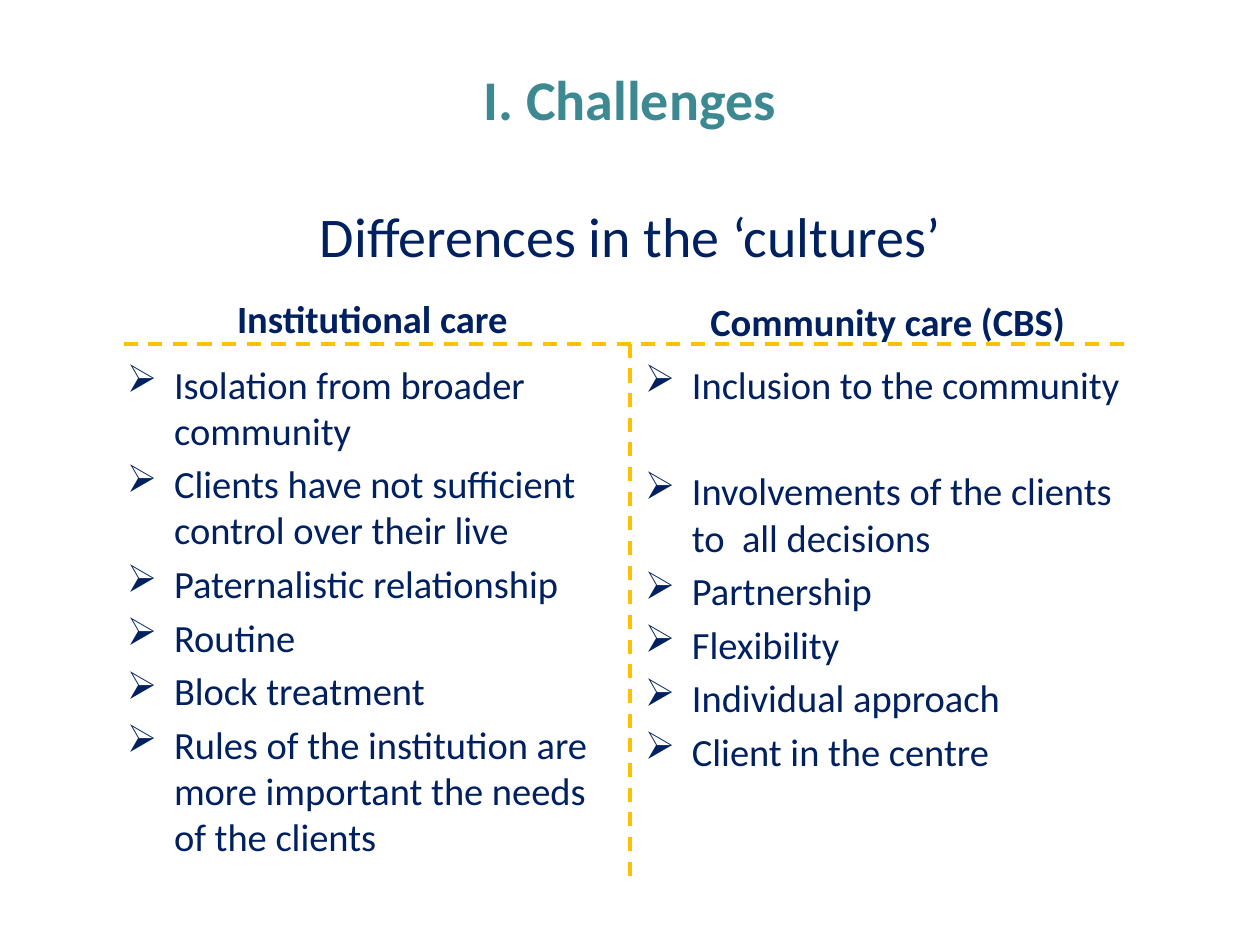
from dataclasses import dataclass

from lxml import etree
from pptx import Presentation
from pptx.dml.color import RGBColor
from pptx.enum import dml, shapes, text
from pptx.oxml import ns
from pptx.util import Cm, Pt

NAVY = RGBColor(0x00, 0x20, 0x60)
TEAL = RGBColor(0x3D, 0x89, 0x91)
GOLD = RGBColor(0xFF, 0xC0, 0x00)
FACE = "Calibri"
MID, TOP = text.MSO_ANCHOR.MIDDLE, text.MSO_ANCHOR.TOP
INSET = 0.13  # default top inset, cm
INDENT = Cm(0.95)


@dataclass
class Label:
    """A text box; lengths in cm, a bullet mark for lists."""
    at: tuple[float, float, float, float]
    lines: list[str]
    size: int
    color: RGBColor = NAVY
    bold: bool = False
    anchor: text.MSO_ANCHOR = TOP
    inset: float = INSET
    mark: str = ""
    gap: float = 0  # points left free below the first line


@dataclass
class Rule:
    """A dashed line; ends in cm."""
    start: tuple[float, float]
    end: tuple[float, float]


def apply(item, **values) -> None:
    for name, value in values.items():
        setattr(item, name, value)


def add_mark(para, mark: str) -> None:
    props = para._p.get_or_add_pPr()
    props.set("marL", str(INDENT))
    props.set("indent", str(-INDENT))
    etree.SubElement(props, ns.qn("a:buChar")).set("char", mark)


def draw_label(slide, label: Label) -> None:
    box = slide.shapes.add_textbox(*map(Cm, label.at))
    frame = box.text_frame
    apply(frame, word_wrap=True, vertical_anchor=label.anchor,
          margin_top=Cm(label.inset))
    for i, line in enumerate(label.lines):
        para = frame.paragraphs[0] if i == 0 else frame.add_paragraph()
        if label.mark:
            add_mark(para, label.mark)
        else:
            para.alignment = text.PP_ALIGN.CENTER
        if i:
            para.space_before = Pt(4.2)
        elif label.gap:
            para.space_after = Pt(label.gap)
        run = para.add_run()
        run.text = line
        apply(run.font, name=FACE, size=Pt(label.size), bold=label.bold)
        run.font.color.rgb = label.color


def draw_rule(slide, rule: Rule) -> None:
    line = slide.shapes.add_connector(
        shapes.MSO_CONNECTOR.STRAIGHT, *map(Cm, rule.start + rule.end))
    line.line.color.rgb = GOLD
    apply(line.line, width=Pt(2), dash_style=dml.MSO_LINE.DASH)
    etree.SubElement(line._element.spPr, ns.qn("a:effectLst"))


# Column grid, cm
WIDE, TALL = 25.4, 19.05
COL = 10.39
LEFT, RIGHT = 2.31, 12.7
HEAD, LIST, BAR = 5.54, 7.14, 6.93

HEADING = dict(size=22, bold=True, anchor=MID, inset=0.43)
ITEMS = dict(size=22, mark="➢")

LABELS = [
    # Title and subtitle
    Label((0, 0, WIDE, 3.94), ["I. Challenges"], 32, TEAL, True, MID),
    Label((0.71, 3.94, 24, 1.6), ["Differences in the ‘cultures’"], 32),
    # Left column
    Label((LEFT, HEAD, COL, 1.45), ["Institutional care"], **HEADING),
    Label((LEFT, LIST, COL, 10.97), [
        "Isolation from broader community",
        "Clients have not sufficient control over their live",
        "Paternalistic relationship",
        "Routine",
        "Block treatment",
        "Rules of the institution are more important the needs of the clients",
    ], **ITEMS),
    # Right column
    Label((RIGHT, HEAD, COL, 1.57), ["Community care (CBS)"], **HEADING),
    Label((RIGHT + 0.05, LIST, COL, 10.97), [
        "Inclusion to the community",
        "Involvements of the clients  to  all decisions",
        "Partnership",
        "Flexibility",
        "Individual approach",
        "Client in the centre",
    ], gap=30.5, **ITEMS),
]

RULES = [
    Rule((RIGHT, BAR), (RIGHT, 17.73)),
    Rule((2.49, BAR), (22.71, BAR)),
]


def main() -> None:
    deck = Presentation()
    apply(deck, slide_width=Cm(WIDE), slide_height=Cm(TALL))
    slide = deck.slides.add_slide(deck.slide_layouts[6])
    for label in LABELS:
        draw_label(slide, label)
    for rule in RULES:
        draw_rule(slide, rule)
    deck.save("out.pptx")


if __name__ == "__main__":
    main()
